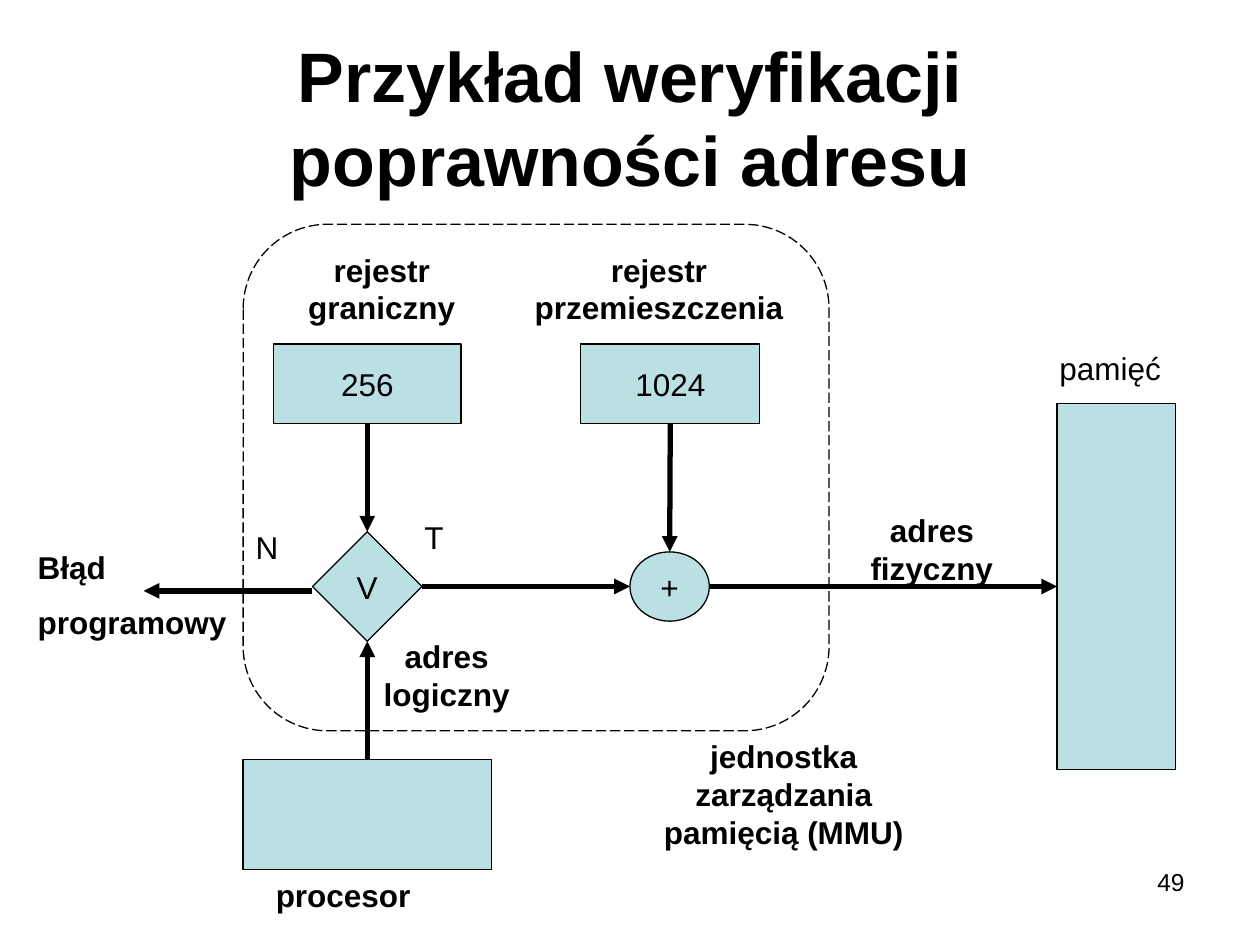
from dataclasses import dataclass

from lxml.etree import SubElement
from pptx import Presentation
from pptx.dml.color import RGBColor
from pptx.enum.dml import MSO_LINE
from pptx.enum.shapes import MSO_CONNECTOR, MSO_SHAPE
from pptx.enum.text import MSO_ANCHOR, PP_ALIGN
from pptx.oxml.ns import qn
from pptx.util import Inches, Pt


@dataclass(frozen=True)
class Theme:
    font: str = "Arial"
    ink: RGBColor = RGBColor(0, 0, 0)
    fill: RGBColor = RGBColor(0xBB, 0xE0, 0xE3)
    title_size: Pt = Pt(40)
    body_size: Pt = Pt(18)
    number_size: Pt = Pt(14)
    paragraph_gap: Pt = Pt(10)
    outline: Pt = Pt(0.75)
    arrow: Pt = Pt(3)


THEME = Theme()
SLIDE_WIDTH, SLIDE_HEIGHT = Inches(10), Inches(7.5)
COLUMN = SLIDE_WIDTH / 100
ROW = SLIDE_HEIGHT / 75
LEFT, CENTER, RIGHT = PP_ALIGN.LEFT, PP_ALIGN.CENTER, PP_ALIGN.RIGHT
TOP_SIDE, LEFT_SIDE, BOTTOM_SIDE, RIGHT_SIDE = range(4)

TITLE = "Przykład weryfikacji poprawności adresu"
TITLE_AREA = (5, 3, 90, 12.5)
NUMBER = "49"
NUMBER_AREA = (71.7, 68.3, 23.3, 5.2)
UNIT_AREA = (19.3, 17.8, 46.5, 40.2)

BLOCKS = {
    "processor": (MSO_SHAPE.RECTANGLE, (19.3, 60.3, 19.7, 8.7), ""),
    "memory": (MSO_SHAPE.RECTANGLE, (83.9, 32, 9.4, 29.1), ""),
    "limit": (MSO_SHAPE.RECTANGLE, (21.7, 27.3, 14.9, 6.3), "256"),
    "relocation": (MSO_SHAPE.RECTANGLE, (46.1, 27.3, 14.2, 6.3), "1024"),
    "check": (MSO_SHAPE.DIAMOND, (24.8, 42.2, 8.7, 8.7), "V"),
    "adder": (MSO_SHAPE.OVAL, (50, 43.8, 6.3, 5.5), "+"),
}

LINKS = [
    ("limit", BOTTOM_SIDE, "check", TOP_SIDE),
    ("relocation", BOTTOM_SIDE, "adder", TOP_SIDE),
    ("processor", TOP_SIDE, "check", BOTTOM_SIDE),
    ("check", RIGHT_SIDE, "adder", LEFT_SIDE),
    ("adder", RIGHT_SIDE, "memory", LEFT_SIDE),
]
MEMORY_ARROW_ROW = 46.55
ERROR_ARROW = (24.8, 46.9, 11.4, 46.9)

LABELS = [
    (["rejestr", "graniczny"], (19.3, 19.4, 22, 7), CENTER, True),
    (["rejestr", "przemieszczenia"], (41.3, 19.4, 22, 7), CENTER, True),
    (["adres", "logiczny"], (27.2, 50.1, 16.5, 7), CENTER, True),
    (["adres", "fizyczny"], (65.7, 40.1, 16.5, 7), CENTER, True),
    (["jednostka zarządzania", "pamięcią (MMU)"], (50.8, 58, 22.8, 10), CENTER, True),
    (["procesor"], (20.9, 69, 14.2, 4), LEFT, True),
    (["Błąd", "programowy"], (2, 43, 18.1, 8.5), LEFT, True),
    (["pamięć"], (83.1, 27.2, 10.2, 4), LEFT, False),
    (["T"], (32.7, 40.6, 4.7, 4), LEFT, False),
    (["N"], (19.3, 41.4, 4.7, 4), LEFT, False),
]


def place(area):
    return [round(part * unit) for part, unit in zip(area, (COLUMN, ROW) * 2)]


def side_middle(name, side):
    left, top, width, height = BLOCKS[name][1]
    return {
        TOP_SIDE: (left + width / 2, top),
        LEFT_SIDE: (left, top + height / 2),
        BOTTOM_SIDE: (left + width / 2, top + height),
        RIGHT_SIDE: (left + width, top + height / 2),
    }[side]


def write(shape, lines, size, align, bold=False, anchor=MSO_ANCHOR.TOP, wrap=True):
    frame = shape.text_frame
    frame.word_wrap = wrap
    frame.vertical_anchor = anchor
    frame.text = "\n".join(lines)
    for index, paragraph in enumerate(frame.paragraphs):
        paragraph.alignment = align
        paragraph.font.name = THEME.font
        paragraph.font.size = size
        paragraph.font.bold = bold
        paragraph.font.color.rgb = THEME.ink
        if index and align == LEFT:
            paragraph.space_before = THEME.paragraph_gap


def add_label(slide, lines, area, size, align, bold=False, anchor=MSO_ANCHOR.TOP):
    write(slide.shapes.add_textbox(*place(area)), lines, size, align, bold, anchor)


def add_outline(slide, kind, area):
    shape = slide.shapes.add_shape(kind, *place(area))
    shape.shadow.inherit = False
    shape.line.color.rgb = THEME.ink
    shape.line.width = THEME.outline
    return shape


def add_block(slide, kind, area, text):
    shape = add_outline(slide, kind, area)
    shape.fill.solid()
    shape.fill.fore_color.rgb = THEME.fill
    if text:
        write(shape, [text], THEME.body_size, CENTER, anchor=MSO_ANCHOR.MIDDLE, wrap=False)
    return shape


def add_arrow(slide, ends):
    connector = slide.shapes.add_connector(MSO_CONNECTOR.STRAIGHT, *place(ends))
    connector.line.color.rgb = THEME.ink
    connector.line.width = THEME.arrow
    line = connector.line._get_or_add_ln()
    SubElement(line, qn("a:tailEnd"), type="triangle")
    SubElement(connector._element.spPr, qn("a:effectLst"))
    return connector


def add_link(slide, blocks, source, source_side, target, target_side):
    start, end = side_middle(source, source_side), side_middle(target, target_side)
    if target == "memory":
        end = (end[0], MEMORY_ARROW_ROW)
    connector = add_arrow(slide, start + end)
    if source != "adder":
        connector.begin_connect(blocks[source], source_side)
    if target not in ("adder", "memory"):
        connector.end_connect(blocks[target], target_side)


def main():
    presentation = Presentation()
    presentation.slide_width, presentation.slide_height = SLIDE_WIDTH, SLIDE_HEIGHT
    slide = presentation.slides.add_slide(presentation.slide_layouts[6])

    add_label(slide, [NUMBER], NUMBER_AREA, THEME.number_size, RIGHT)
    add_label(slide, [TITLE], TITLE_AREA, THEME.title_size, CENTER, True, MSO_ANCHOR.MIDDLE)

    unit = add_outline(slide, MSO_SHAPE.ROUNDED_RECTANGLE, UNIT_AREA)
    unit.fill.background()
    unit.line.dash_style = MSO_LINE.LONG_DASH

    blocks = {name: add_block(slide, *block) for name, block in BLOCKS.items()}
    for link in LINKS:
        add_link(slide, blocks, *link)
    add_arrow(slide, ERROR_ARROW)

    for lines, area, align, bold in LABELS:
        add_label(slide, lines, area, THEME.body_size, align, bold)

    presentation.save("out.pptx")


if __name__ == "__main__":
    main()
